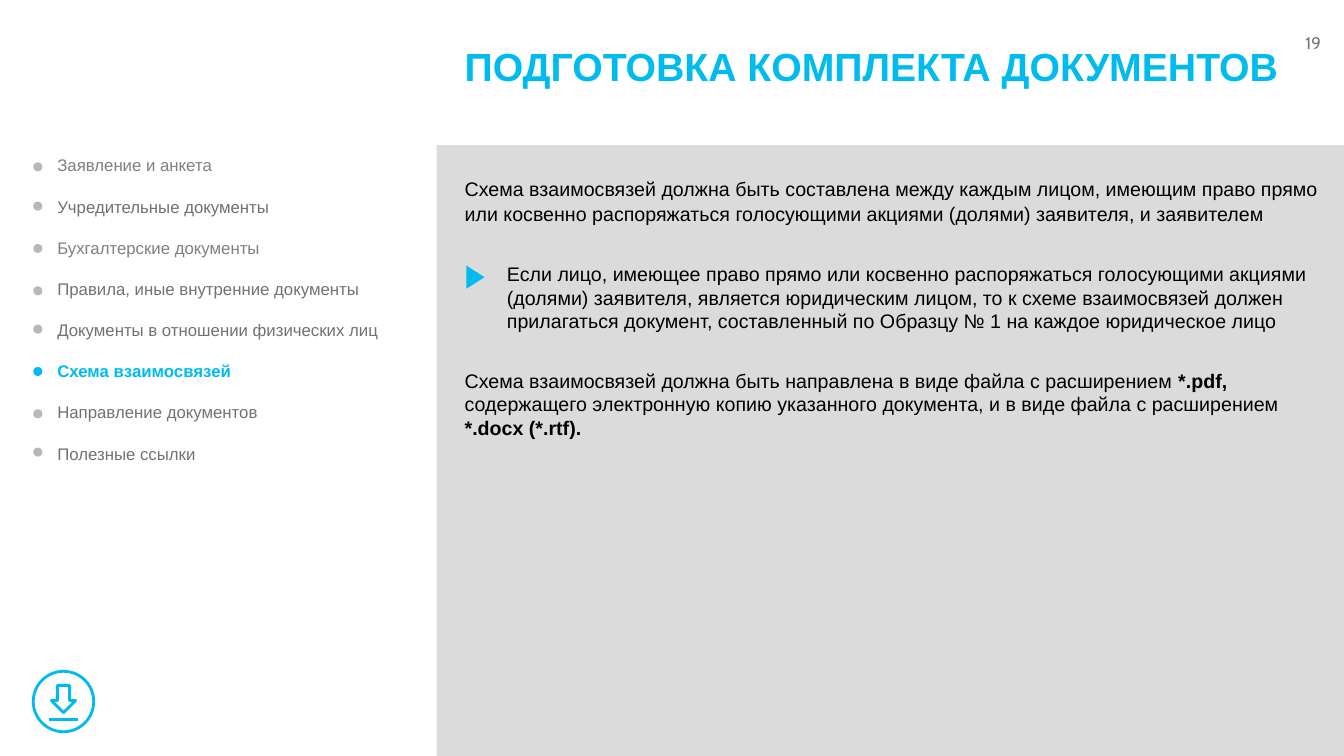
from pptx import Presentation
from pptx.dml.color import RGBColor
from pptx.enum.shapes import MSO_CONNECTOR, MSO_SHAPE
from pptx.enum.text import MSO_ANCHOR, PP_ALIGN
from pptx.oxml.ns import qn
from pptx.util import Inches, Pt
from lxml import etree

RECTANGLE = MSO_SHAPE.RECTANGLE
TRIANGLE = MSO_SHAPE.ISOSCELES_TRIANGLE
OVAL = MSO_SHAPE.OVAL
DOWN_ARROW = MSO_SHAPE.DOWN_ARROW
STRAIGHT = MSO_CONNECTOR.STRAIGHT
TOP, MIDDLE = MSO_ANCHOR.TOP, MSO_ANCHOR.MIDDLE
RIGHT = PP_ALIGN.RIGHT

ACCENT, PANEL, DOT = "00BBEE", "DBDBDC", "B7B8B9"
BLACK, NUMBER_GRAY = "000000", "74777B"
LIGHT_GRAY, COOL_GRAY, WARM_GRAY = "808080", "6F7171", "767171"

# Menu entries: label, colour, top of the dot
MENU = [
    ("Заявление и анкета", LIGHT_GRAY, 1.61),
    ("Учредительные документы", COOL_GRAY, 2.0),
    ("Бухгалтерские документы", LIGHT_GRAY, 2.42),
    ("Правила, иные внутренние документы", WARM_GRAY, 2.84),
    ("Документы в отношении физических лиц", WARM_GRAY, 3.22),
    ("Схема взаимосвязей", ACCENT, 3.64),
    ("Направление документов", WARM_GRAY, 4.06),
    ("Полезные ссылки", WARM_GRAY, 4.44),
]

INTRO = ("Схема взаимосвязей должна быть составлена между каждым лицом, имеющим право прямо "
         "или косвенно распоряжаться голосующими акциями (долями) заявителя, и заявителем")
CONDITION = ("Если лицо, имеющее право прямо или косвенно распоряжаться голосующими акциями "
             "(долями) заявителя, является юридическим лицом, то к схеме взаимосвязей должен "
             "прилагаться документ, составленный по Образцу № 1 на каждое юридическое лицо")
FILE_FORMATS = [
    ("Схема взаимосвязей должна быть направлена в виде файла с расширением ", {}),
    ("*.pdf,", {"bold": True}),
    (" содержащего электронную копию указанного документа, "
     "и в виде файла с расширением ", {}),
    ("*.docx (*.rtf).", {"bold": True}),
]


def color(value):
    return RGBColor.from_string(value)


class SlideBuilder:
    font_name = "Arial"
    line_width = Pt(2)

    def __init__(self, slide):
        self.slide = slide

    def shape(self, kind, box, fill=None, line=None, rotation=0):
        shape = self.slide.shapes.add_shape(kind, *map(Inches, box))
        shape.shadow.inherit = False
        shape.rotation = rotation
        if fill:
            shape.fill.solid()
            shape.fill.fore_color.rgb = color(fill)
        else:
            shape.fill.background()
        if line:
            shape.line.color.rgb = color(line)
            shape.line.width = self.line_width
        else:
            shape.line.fill.background()

    def line(self, ends, line):
        connector = self.slide.shapes.add_connector(STRAIGHT, *map(Inches, ends))
        connector.line.color.rgb = color(line)
        connector.line.width = self.line_width
        etree.SubElement(connector._element.spPr, qn("a:effectLst"))

    def text(self, box, paragraphs, size=14, fill=BLACK, anchor=TOP, font=None, **layout):
        """Each paragraph is a list of (text, format) runs."""
        frame = self.slide.shapes.add_textbox(*map(Inches, box)).text_frame
        frame.word_wrap = True
        frame.vertical_anchor = anchor
        for index, runs in enumerate(paragraphs):
            paragraph = frame.add_paragraph() if index else frame.paragraphs[0]
            for name, value in layout.items():
                setattr(paragraph, name, value)
            for content, changes in runs:
                run = paragraph.add_run()
                run.text = content
                style = {"name": font or self.font_name, "size": Pt(size),
                         "bold": False, "fill": fill, **changes}
                run.font.color.rgb = color(style.pop("fill"))
                for name, value in style.items():
                    setattr(run.font, name, value)


def main():
    presentation = Presentation()
    presentation.slide_width = Inches(13.33)
    presentation.slide_height = Inches(7.5)
    builder = SlideBuilder(presentation.slides.add_slide(presentation.slide_layouts[6]))

    # Page number, panel and title
    builder.text((10.78, 0.28, 2.42, 0.3), [[("19", {})]], size=12,
                 fill=NUMBER_GRAY, font="Cabin", alignment=RIGHT)
    builder.shape(RECTANGLE, (4.33, 1.44, 9, 6.06), fill=PANEL)
    builder.text((4.51, 0.18, 8.82, 1.01),
                 [[("ПОДГОТОВКА КОМПЛЕКТА ДОКУМЕНТОВ", {"bold": True})]],
                 size=28, fill=ACCENT, anchor=MIDDLE, line_spacing=0.9)

    # Download icon
    builder.shape(OVAL, (0.33, 6.66, 0.6, 0.6), line=ACCENT)
    builder.shape(DOWN_ARROW, (0.51, 6.8, 0.24, 0.27), line=ACCENT)
    builder.line((0.49, 7.14, 0.77, 7.14), ACCENT)

    # Panel text with its marker
    builder.text((4.51, 1.69, 8.82, 0.61), [[(INTRO, {})]], line_spacing=1.07)
    builder.shape(TRIANGLE, (4.6, 2.66, 0.23, 0.18), fill=ACCENT, rotation=90)
    builder.text((4.93, 2.55, 8.4, 0.81), [[(CONDITION, {})]])
    builder.text((4.51, 3.61, 8.82, 0.81), [FILE_FORMATS])

    # Menu with the current section highlighted
    labels = [[(label, {"fill": fill, "bold": fill == ACCENT})] for label, fill, _ in MENU]
    builder.text((0.47, 1.49, 3.69, 3.19), labels, size=12, space_after=Pt(15))
    for _, fill, top in MENU:
        builder.shape(OVAL, (0.33, top, 0.09, 0.09), fill=ACCENT if fill == ACCENT else DOT)

    presentation.save("out.pptx")


if __name__ == "__main__":
    main()
